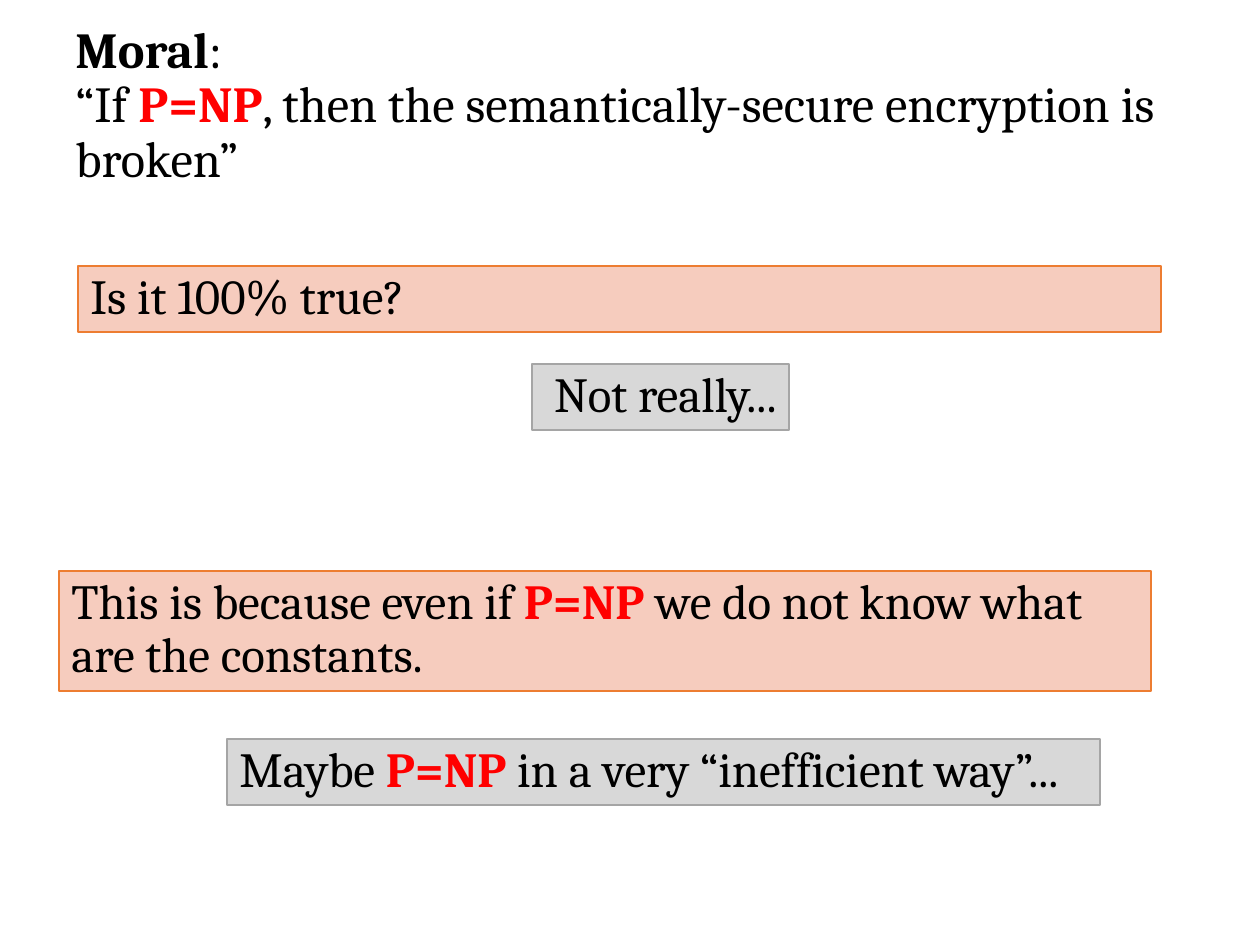
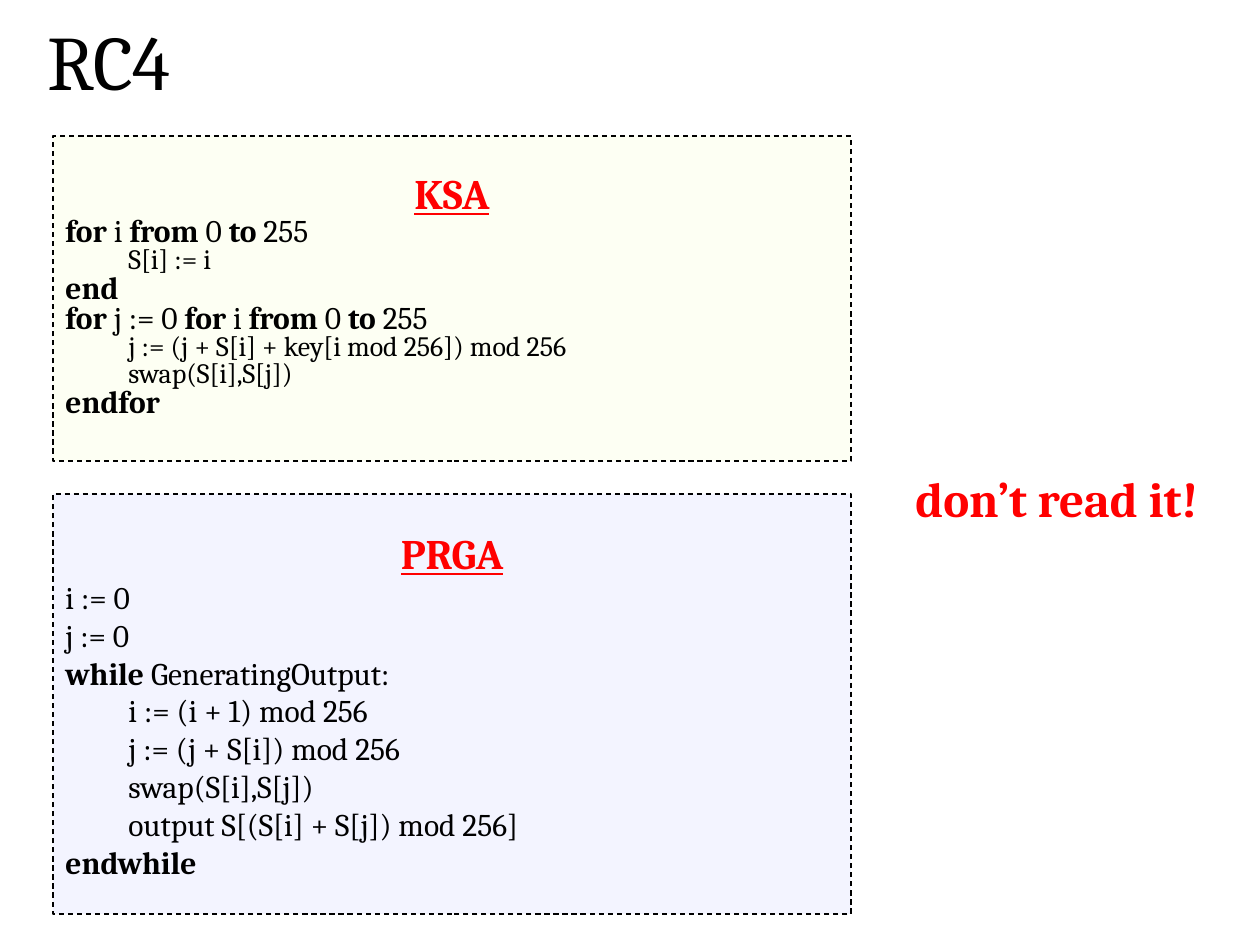
from pptx import Presentation
from pptx.dml.color import RGBColor
from pptx.enum.dml import MSO_LINE
from pptx.enum.shapes import MSO_SHAPE
from pptx.enum.text import MSO_ANCHOR, PP_ALIGN
from pptx.util import Emu, Pt

FONT = "Cambria"
COLORS = {
    "text": "000000",
    "accent": "FF0000",
    "question": "F6CCBE",
    "question_line": "ED7D31",
    "answer": "D8D8D8",
    "answer_line": "A5A5A5",
    "ksa": "FDFFF3",
    "prga": "F3F4FF",
}
KSA = [
    (0, "**for **i **from** 0 **to** 255"),
    (1, "S[i] := i"),
    (0, "**end**"),
    (0, "**for** j := 0 **for **i **from** 0 **to** 255"),
    (1, "j := (j + S[i] + key[i mod 256]) mod 256"),
    (1, "swap(S[i],S[j])"),
    (0, "**endfor**"),
]
PRGA = [
    (0, "i := 0"),
    (0, "j := 0"),
    (0, "**while **GeneratingOutput:"),
    (1, "i := (i + 1) mod 256"),
    (1, "j := (j + S[i]) mod 256"),
    (1, "swap(S[i],S[j])"),
    (1, "output S[(S[i] + S[j]) mod 256]"),
    (0, "**endwhile**"),
]


def px(n):
    return Emu(round(n * 914400 / 126))


def rgb(name):
    return RGBColor.from_string(COLORS[name])


def write(tf, text, size=28, color="text", bold_color=None, underline=False,
          align=PP_ALIGN.LEFT, spacing=1.0, level=0):
    p = tf.paragraphs[0]
    if p.runs:
        p = tf.add_paragraph()
    p.alignment = align
    p.line_spacing = spacing
    p.level = level
    if level:
        pPr = p._p.get_or_add_pPr()
        pPr.set("marL", str(px(63 * level)))
        pPr.set("indent", "0")
    for i, part in enumerate(text.split("**")):
        if not part:
            continue
        bold = i % 2 == 1
        r = p.add_run()
        r.text = part
        r.font.name = FONT
        r.font.size = Pt(size)
        r.font.bold = bold
        r.font.underline = underline
        r.font.color.rgb = rgb(bold_color if bold and bold_color else color)


def text_box(slide, box, anchor=MSO_ANCHOR.TOP):
    tf = slide.shapes.add_textbox(*map(px, box)).text_frame
    tf.word_wrap = True
    tf.vertical_anchor = anchor
    return tf


def panel(slide, box, fill, line, width, anchor=MSO_ANCHOR.TOP, dash=None):
    sp = slide.shapes.add_shape(MSO_SHAPE.RECTANGLE, *map(px, box))
    sp.shadow.inherit = False
    sp.fill.solid()
    sp.fill.fore_color.rgb = rgb(fill)
    sp.line.color.rgb = rgb(line)
    sp.line.width = Pt(width)
    if dash:
        sp.line.dash_style = dash
    tf = sp.text_frame
    tf.word_wrap = True
    tf.vertical_anchor = anchor
    return tf


def statement(slide, box, kind, text, align=PP_ALIGN.LEFT):
    tf = panel(slide, box, kind, kind + "_line", 0.79)
    write(tf, text, bold_color="accent", align=align, spacing=0.9)


def code_panel(slide, box, fill, name, lines, inner_size, spacing):
    tf = panel(slide, box, fill, "text", 0.75, MSO_ANCHOR.MIDDLE, MSO_LINE.DASH)
    write(tf, f"**{name}**", size=24, bold_color="accent", underline=True,
          align=PP_ALIGN.CENTER, spacing=spacing)
    for level, text in lines:
        write(tf, text, size=inner_size if level else 18, level=level, spacing=spacing)


def moral_slide(slide):
    tf = text_box(slide, (63, 53, 1166, 184), MSO_ANCHOR.BOTTOM)
    tf.margin_bottom = px(49)
    write(tf, "**Moral**:", size=28.8, spacing=0.9)
    write(tf, "“If **P=NP**, then the semantically-secure encryption is broken”",
          size=28.8, bold_color="accent", spacing=0.9)
    statement(slide, (78, 266, 1083, 66), "question", "Is it 100% true?")
    statement(slide, (532, 364, 257, 66), "answer", "Not really...", PP_ALIGN.RIGHT)
    statement(slide, (59, 571, 1092, 120), "question",
              "This is because even if **P=NP** we do not know what are the constants.")
    statement(slide, (227, 739, 873, 66), "answer",
              "Maybe **P=NP** in a very “inefficient way”...")


def rc4_slide(slide):
    left, width = 53, 798
    code_panel(slide, (left, 494, width, 420), "prga", "PRGA", PRGA, 18, 1.0)
    code_panel(slide, (left, 136, width, 325), "ksa", "KSA", KSA, 16, 0.8)
    write(text_box(slide, (35, -13, 1134, 158), MSO_ANCHOR.MIDDLE), "RC4",
          size=44, spacing=0.9)
    write(text_box(slide, (903, 462, 323, 72)), "**don’t read it!**", bold_color="accent")


def main():
    prs = Presentation()
    prs.slide_width, prs.slide_height = px(1260), px(945)
    for build in (moral_slide, rc4_slide):
        build(prs.slides.add_slide(prs.slide_layouts[6]))
    prs.save("out.pptx")


if __name__ == "__main__":
    main()
